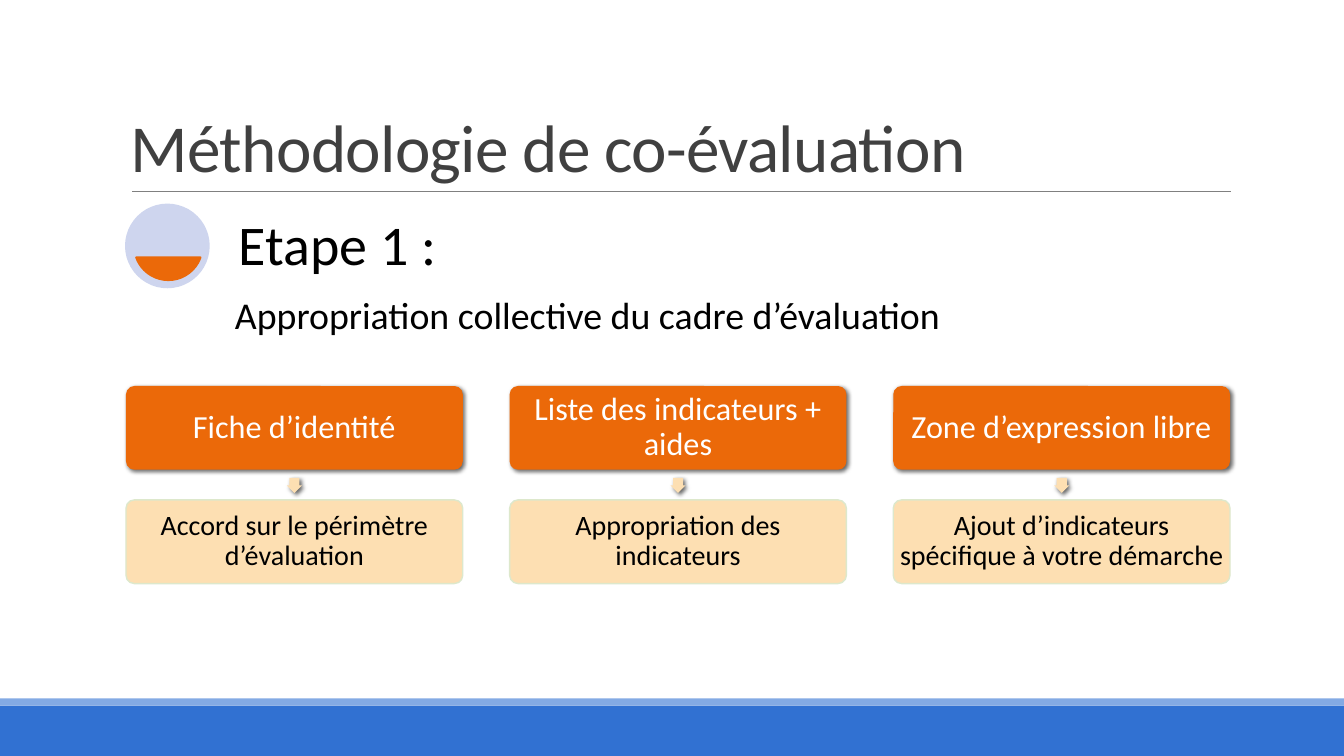
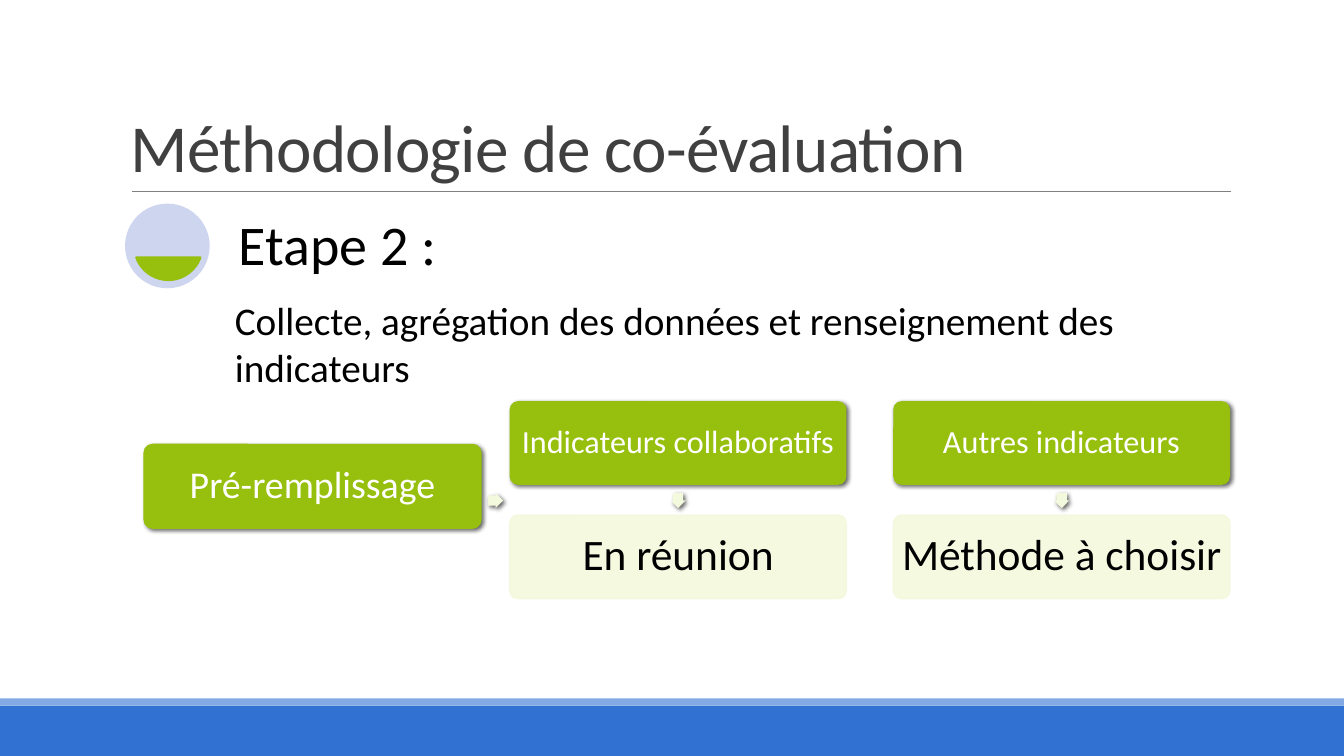
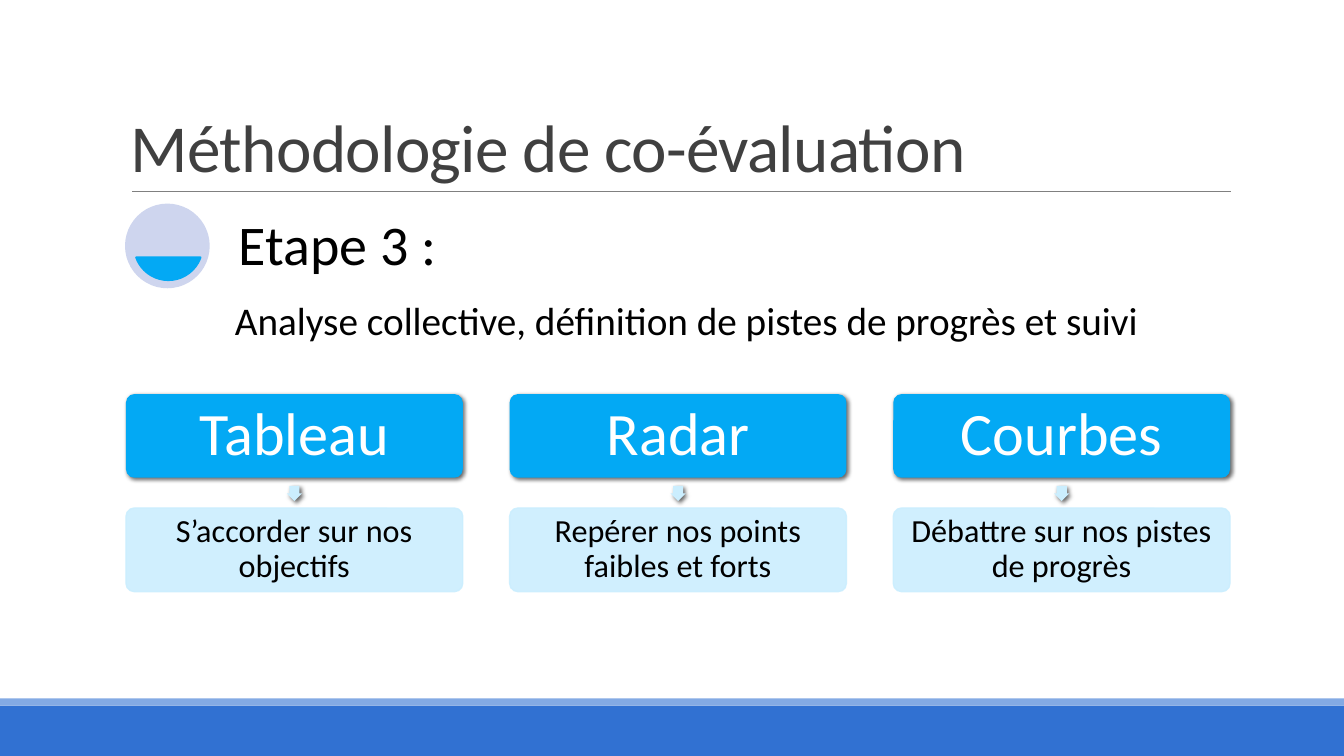
"""Build three slides on the steps of the co-evaluation method."""
from lxml import etree
from pptx import Presentation
from pptx import util as u
from pptx.dml.color import RGBColor
from pptx.enum import shapes, text
from pptx.oxml.ns import qn

COLOURS = {
    "white": "FFFFFF", "black": "000000", "title": "404040", "rule": "808080",
    "band": "3171D2", "stripe": "83AAE4", "badge": "CED5EE",
    "orange": "EB6909", "peach": "FDDFB2", "sage": "DDE8CC",
    "green": "97BF0D", "lime": "F3F9DD",
    "blue": "03A9F4", "sky": "CBEEFE",
}
FONT = "Calibri"
FORM = shapes.MSO_SHAPE
ANCHOR = text.MSO_ANCHOR
ALIGN = text.PP_ALIGN
SLIDE_W, SLIDE_H = 13.33, 7.5
CARD_W, CARD_H = 3.34, 0.83
FIRST_COLUMN, LAST_COLUMN = 1.25, 8.86
COLUMN_STEP = (LAST_COLUMN - FIRST_COLUMN) / 2
ARROW = 0.15
ARROW_GAP = 0.08
ROW_STEP = 1.13


def rgb(name):
    """Return the named colour."""
    return RGBColor.from_string(COLOURS[name])


def add_form(slide, form, box, fill, outline=None, weight=1, adjust=()):
    """Add a filled preset shape without shadow."""
    shape = slide.shapes.add_shape(form, *map(u.Inches, box))
    shape.shadow.inherit = False
    shape.fill.solid()
    shape.fill.fore_color.rgb = rgb(fill)
    if outline:
        shape.line.color.rgb = rgb(outline)
        shape.line.width = u.Pt(weight)
    else:
        shape.line.fill.background()
    for index, value in enumerate(adjust):
        shape.adjustments[index] = value
    return shape


def cast_shadow(shape):
    """Give the shape a small shadow towards the lower right."""
    effects = shape.element.spPr.find(qn("a:effectLst"))
    shadow = etree.SubElement(effects, qn("a:outerShdw"), blurRad="38100", dist="25400",
                              dir="2700000", algn="ctr", rotWithShape="0")
    colour = etree.SubElement(shadow, qn("a:srgbClr"), val=COLOURS["black"])
    etree.SubElement(colour, qn("a:alpha"), val="60000")


def fade(shape):
    """Make the fill and outline slightly transparent."""
    for colour in shape.element.spPr.iter(qn("a:srgbClr")):
        etree.SubElement(colour, qn("a:alpha"), val="90000")


def write(shape, words, size, colour="black", align=ALIGN.LEFT, anchor=ANCHOR.TOP,
          insets=(0.03, 0.03), spacing=0.9, tracking=None):
    """Write one formatted paragraph into the shape."""
    frame = shape.text_frame
    frame.word_wrap = True
    frame.vertical_anchor = anchor
    frame.margin_left = frame.margin_right = u.Inches(insets[0])
    frame.margin_top = frame.margin_bottom = u.Inches(insets[1])
    paragraph = frame.paragraphs[0]
    paragraph.alignment = align
    paragraph.line_spacing = spacing
    run = paragraph.add_run()
    run.text = words
    run.font.name = FONT
    run.font.size = u.Pt(size)
    run.font.color.rgb = rgb(colour)
    if tracking:
        run.font._element.set("spc", str(tracking))


def add_text(slide, box, words, size, **style):
    """Add a text box."""
    write(slide.shapes.add_textbox(*map(u.Inches, box)), words, size, **style)


def add_frame(slide):
    """Add the bands, the title and the rule that every slide has."""
    add_form(slide, FORM.RECTANGLE, (0, 7, SLIDE_W, 0.5), "band")
    add_form(slide, FORM.RECTANGLE, (0, 6.93, SLIDE_W, 0.07), "stripe")
    rule = slide.shapes.add_connector(shapes.MSO_CONNECTOR.STRAIGHT,
                                      *map(u.Inches, (1.31, 1.9, 12.21, 1.9)))
    rule.line.color.rgb = rgb("rule")
    rule.line.width = u.Pt(0.5)
    etree.SubElement(rule.element.spPr, qn("a:effectLst"))
    add_text(slide, (1.2, 0.31, 11, 1.59), "Méthodologie de co-évaluation", 48,
             colour="title", anchor=ANCHOR.BOTTOM, insets=(0.1, 0.05),
             spacing=0.85, tracking=-50)


def add_step(slide, number, summary, accent, size=28, spacing=1.0):
    """Add the badge, the step number and its summary."""
    add_form(slide, FORM.OVAL, (1.24, 2.02, 0.84, 0.84), "badge")
    add_form(slide, FORM.CHORD, (1.33, 2.1, 0.68, 0.68), accent, accent, 1.25,
             adjust=(11.683, 96.317))
    add_text(slide, (2.26, 2.02, 2.5, 0.84), f"Etape {number} :", 40,
             anchor=ANCHOR.BOTTOM, insets=(0.11, 0.11))
    add_text(slide, (2.26, 2.87, 9.98, 3.69), summary, size,
             insets=(0.07, 0.07), spacing=spacing)


def add_card(slide, left, top, words, size, fill, colour, outline=None, inset=0.03):
    """Add a rounded card with centred text."""
    card = add_form(slide, FORM.ROUNDED_RECTANGLE, (left, top, CARD_W, CARD_H),
                    fill, outline, adjust=(0.1,))
    write(card, words, size, colour=colour, align=ALIGN.CENTER,
          anchor=ANCHOR.MIDDLE, insets=(inset, inset))
    return card


def add_arrow(slide, left, top, fill, turn=0):
    """Add a small block arrow."""
    arrow = add_form(slide, FORM.RIGHT_ARROW, (left, top, ARROW, ARROW), fill,
                     adjust=(0.667, 0.5))
    arrow.rotation = turn
    cast_shadow(arrow)


def add_columns(slide, top, pairs, accent, tint, outline, sizes,
                insets=(0.03, 0.03), first=0, faded=True):
    """Add columns of a heading card, an arrow down and a detail card."""
    for column, (heading, detail) in enumerate(pairs, first):
        left = FIRST_COLUMN + column * COLUMN_STEP
        cast_shadow(add_card(slide, left, top, heading, sizes[0], accent, "white",
                             inset=insets[0]))
        add_arrow(slide, left + (CARD_W - ARROW) / 2, top + CARD_H + ARROW_GAP, tint, 90)
        detail_card = add_card(slide, left, top + ROW_STEP, detail, sizes[1], tint,
                               "black", outline, insets[1])
        if faded:
            fade(detail_card)


def build_appropriation(slide):
    """Fill the slide of step 1."""
    add_step(slide, 1, "Appropriation collective du cadre d’évaluation", "orange", 27, 0.9)
    pairs = [
        ("Fiche d’identité", "Accord sur le périmètre d’évaluation"),
        ("Liste des indicateurs + aides", "Appropriation des indicateurs"),
        ("Zone d’expression libre", "Ajout d’indicateurs spécifique à votre démarche"),
    ]
    add_columns(slide, 3.83, pairs, "orange", "peach", "sage", (23, 20), faded=False)


def build_collection(slide):
    """Fill the slide of step 2."""
    add_step(slide, 2, "Collecte, agrégation des données et renseignement des indicateurs",
             "green")
    pairs = [
        ("Indicateurs collaboratifs", "En réunion"),
        ("Autres indicateurs", "Méthode à choisir"),
    ]
    add_columns(slide, 3.98, pairs, "green", "lime", "lime", (23, 31),
                insets=(0.03, 0.04), first=1)
    cast_shadow(add_card(slide, 1.43, 4.41, "Pré-remplissage", 27, "green", "white",
                         "green", 0.04))
    add_arrow(slide, 4.84, 4.89, "lime")


def build_analysis(slide):
    """Fill the slide of step 3."""
    add_step(slide, 3, "Analyse collective, définition de pistes de progrès et suivi", "blue")
    pairs = [
        ("Tableau", "S’accorder sur nos objectifs"),
        ("Radar", "Repérer nos points faibles et forts"),
        ("Courbes", "Débattre sur nos pistes de progrès"),
    ]
    add_columns(slide, 3.91, pairs, "blue", "sky", "sky", (43, 23), insets=(0.06, 0.03))


def main():
    """Build and save the presentation."""
    deck = Presentation()
    deck.slide_width, deck.slide_height = u.Inches(SLIDE_W), u.Inches(SLIDE_H)
    for build in (build_appropriation, build_collection, build_analysis):
        slide = deck.slides.add_slide(deck.slide_layouts[6])
        add_frame(slide)
        build(slide)
    deck.save("out.pptx")


if __name__ == "__main__":
    main()
